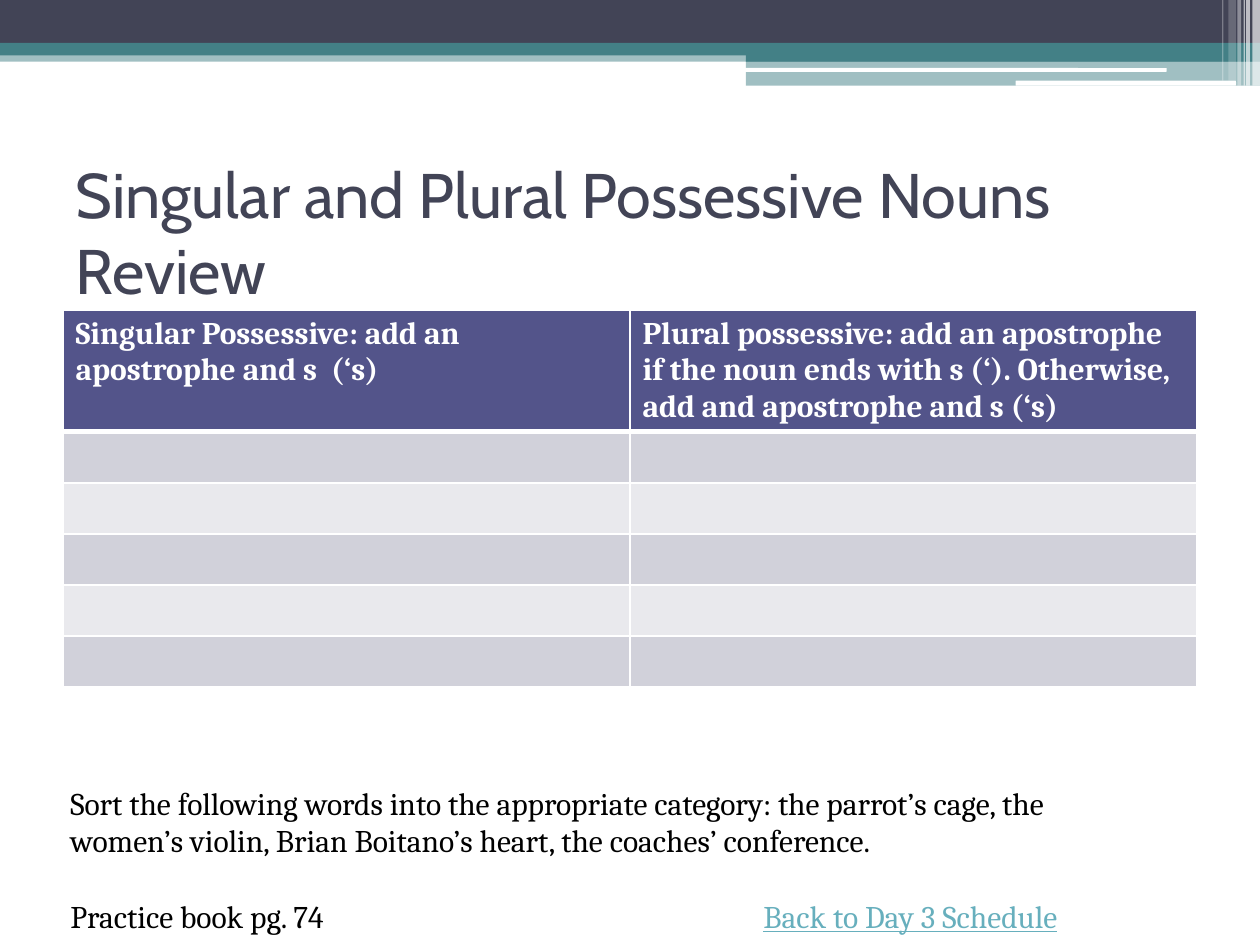
from lxml import etree
from pptx import Presentation, util as u
from pptx.dml.color import RGBColor
from pptx.enum import shapes, text
from pptx.oxml.ns import qn

THEME = {
    "navy": "424456", "teal": "438086", "white": "FFFFFF", "black": "000000",
    "header": "53548A", "bands": ("D1D1DA", "E9E9ED"), "link": "67AFBD",
    "title_font": "Cabin", "body_font": "Cambria", "title_size": 36, "body_size": 18,
}

TITLE = "Singular and Plural Possessive Nouns\vReview"
HEADERS = (
    "Singular Possessive: add an apostrophe and s  (‘s)",
    "Plural possessive: add an apostrophe if the noun ends with s (‘). "
    "Otherwise, add and apostrophe and s (‘s)",
)
BLANK_ROWS = 5
INSTRUCTIONS = (
    "Sort the following words into the appropriate category: the parrot’s cage, the",
    "women’s violin, Brian Boitano’s heart, the coaches’ conference.",
)
PRACTICE, BACK = "Practice book pg. 74", "Back to Day 3 Schedule"

BANNER = (
    (0, 0.4, 10, 0.09, "teal", 50),
    (0, 0, 10, 0.34, "navy", 100),
    (0, 0.34, 10, 0.1, "teal", 100),
    (5.92, 0.39, 4.08, 0.1, "teal", 100),
    (5.92, 0.48, 4.08, 0.2, "teal", 50),
)
RULES = ((5.91, 0.54, 3.35, 0.03, "white", 100), (8.06, 0.64, 1.75, 0.04, "white", 100))
STRIPES = (
    (9.94, 0, 0.06, 0.68, "white", 65),
    (9.89, 0, 0.03, 0.68, "white", 65),
    (9.87, 0, 0.01, 0.68, "white", 60),
    (9.82, 0, 0.03, 0.68, "white", 40),
    (9.75, 0, 0.06, 0.64, "white", 20),
    (9.7, 0, 0.01, 0.64, "white", 30),
)


def rgb(value):
    return RGBColor.from_string(value)


def set_font(font, face, size, color, bold=False):
    font.name, font.size, font.bold = face, u.Pt(size), bold
    font.color.rgb = rgb(color)


def add_bars(s, bars, kind):
    for x, y, w, h, color, opacity in bars:
        sp = s.shapes.add_shape(kind, *map(u.Inches, (x, y, w, h)))
        sp.shadow.inherit = False
        sp.line.fill.background()
        sp.fill.solid()
        sp.fill.fore_color.rgb = rgb(THEME[color])
        if opacity < 100:
            clr = sp.fill._xPr.find(".//" + qn("a:srgbClr"))
            etree.SubElement(clr, qn("a:alpha"), val=str(opacity * 1000))


def set_borders(cell, bottom):
    tc_pr = cell._tc.get_or_add_tcPr()
    widths = (("lnL", 1), ("lnR", 1), ("lnT", 1), ("lnB", bottom))
    for i, (side, width) in enumerate(widths):
        ln = etree.Element(qn("a:" + side), w=str(u.Pt(width)))
        fill = etree.SubElement(ln, qn("a:solidFill"))
        etree.SubElement(fill, qn("a:srgbClr"), val=THEME["white"])
        tc_pr.insert(i, ln)


def add_title(s):
    sp = s.shapes.title
    sp.left, sp.top, sp.width, sp.height = map(u.Inches, (0.5, 1.25, 9, 1.17))
    tf = sp.text_frame
    tf.text = TITLE
    tf.vertical_anchor = text.MSO_ANCHOR.MIDDLE
    p = tf.paragraphs[0]
    p.alignment = text.PP_ALIGN.LEFT
    set_font(p.font, THEME["title_font"], THEME["title_size"], THEME["navy"])


def add_sorting_table(s):
    header_h, row_h = 0.95, 0.4
    frame = s.shapes.add_table(
        BLANK_ROWS + 1, len(HEADERS),
        *map(u.Inches, (0.5, 2.46, 9, header_h + BLANK_ROWS * row_h)))
    table = frame.table
    for r, row in enumerate(table.rows):
        row.height = u.Inches(row_h if r else header_h)
        for c, cell in enumerate(row.cells):
            cell.fill.solid()
            color = THEME["bands"][(r - 1) % 2] if r else THEME["header"]
            cell.fill.fore_color.rgb = rgb(color)
            set_borders(cell, 1 if r else 3)
            if r == 0:
                cell.text = HEADERS[c]
                set_font(cell.text_frame.paragraphs[0].font, THEME["body_font"],
                         THEME["body_size"], THEME["white"], True)


def add_instructions(s):
    tf = s.shapes.add_textbox(*map(u.Inches, (0.46, 6.17, 8.69, 1.31))).text_frame
    tf.word_wrap = True
    tf.text = "\n".join((*INSTRUCTIONS, PRACTICE + "\t"))
    for p in tf.paragraphs:
        set_font(p.font, THEME["body_font"], THEME["body_size"], THEME["black"])
    p = tf.paragraphs[-1]
    p.space_before = u.Pt(21.4)
    tabs = etree.Element(qn("a:tabLst"))
    etree.SubElement(tabs, qn("a:tab"), pos=str(u.Inches(5.5)), algn="l")
    p._p.pPr.find(qn("a:defRPr")).addprevious(tabs)
    r = p.add_run()
    r.text = BACK
    r.font.underline = True
    r.font.color.rgb = rgb(THEME["link"])


def main():
    prs = Presentation()
    prs.slide_width, prs.slide_height = u.Inches(10), u.Inches(7.5)
    s = prs.slides.add_slide(prs.slide_layouts[5])
    add_bars(s, BANNER, shapes.MSO_SHAPE.RECTANGLE)
    add_bars(s, RULES, shapes.MSO_SHAPE.ROUNDED_RECTANGLE)
    add_bars(s, STRIPES, shapes.MSO_SHAPE.RECTANGLE)
    add_title(s)
    add_sorting_table(s)
    add_instructions(s)
    prs.save("out.pptx")


if __name__ == "__main__":
    main()
